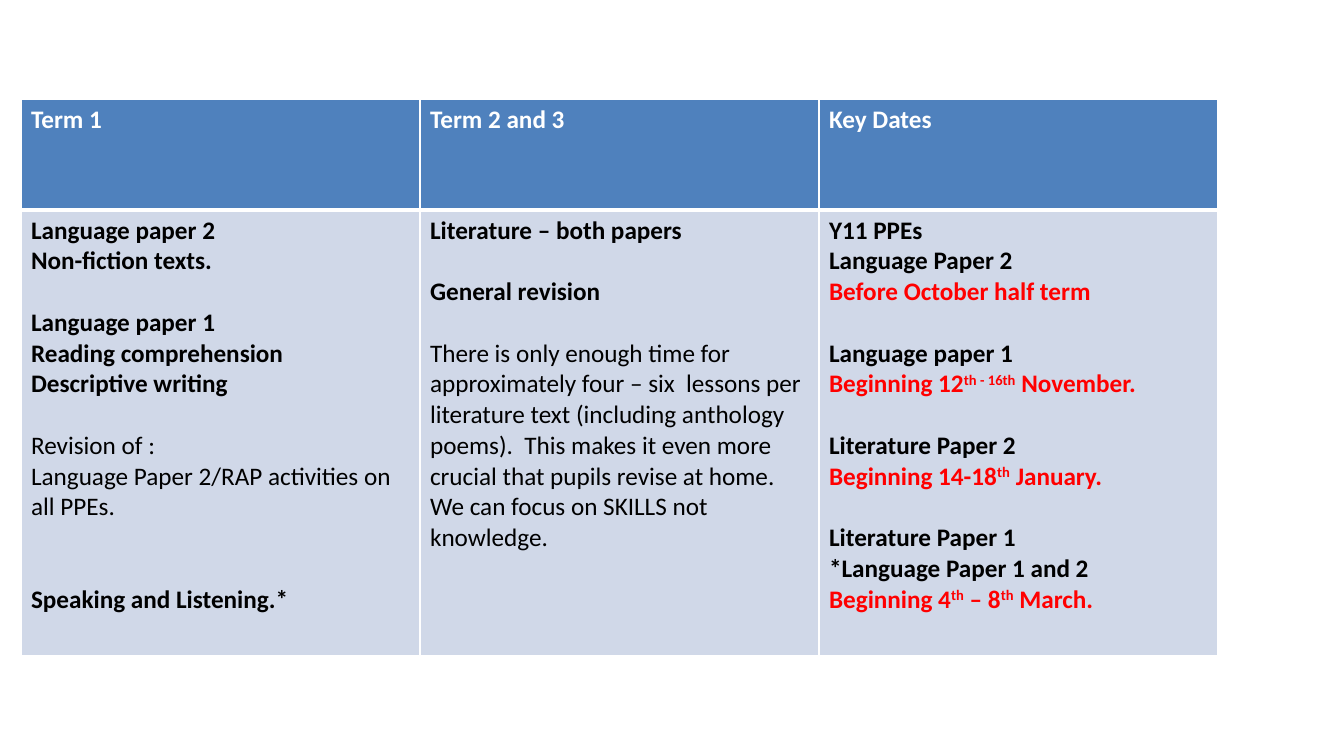
import lxml.etree
import pptx
import pptx.dml.color
import pptx.oxml.ns
import pptx.util

PX = 9525
BLACK, WHITE, RED = "000000", "FFFFFF", "FF0000"
HEADER_FILL, BODY_FILL = "4F81BD", "D0D8E8"
LINE_PT = 22
HEADINGS = ["Term 1", "Term 2 and 3", "Key Dates"]
TERM_1 = [
    ("Language paper 2", {}),
    ("Non-fiction texts.", {}),
    ("Language paper 1", {"gap": 1}),
    ("Reading comprehension", {}),
    ("Descriptive writing", {}),
    ("Revision of :", {"gap": 1, "bold": False}),
    ("Language Paper 2/RAP activities on all PPEs.", {"bold": False}),
    ("Speaking and Listening.*", {"gap": 2}),
]
TERMS_2_AND_3 = [
    ("Literature – both papers", {}),
    ("General revision", {"gap": 1}),
    ("There is only enough time for approximately four – six  lessons per "
     "literature text (including anthology poems).  This makes it even more "
     "crucial that pupils revise at home. We can focus on SKILLS not "
     "knowledge.", {"gap": 1, "bold": False}),
]
KEY_DATES = [
    ("Y11 PPEs", {}),
    ("Language Paper 2", {}),
    ("Before October half term", {"color": RED}),
    ("Language paper 1", {"gap": 1}),
    ("Beginning 12^th - 16th^ November.", {"color": RED}),
    ("Literature Paper 2", {"gap": 1}),
    ("Beginning 14-18^th^ January.", {"color": RED}),
    ("Literature Paper 1", {"gap": 1}),
    ("*Language Paper 1 and 2", {}),
    ("Beginning 4^th^ – 8^th^ March.", {"color": RED}),
]


def px(length):
    """Turn whole px into EMU."""
    return pptx.util.Emu(length * PX)


def rgb(value):
    """Turn a hex string into a colour."""
    return pptx.dml.color.RGBColor.from_string(value)


def write(paragraph, text, color=BLACK, bold=True, gap=0):
    """Write text, raising what stands between carets, after a gap in lines."""
    if gap:
        paragraph.space_before = pptx.util.Pt(gap * LINE_PT)
    for index, part in enumerate(text.split("^")):
        run = paragraph.add_run()
        run.text = part
        run.font.name = "Calibri"
        run.font.size = pptx.util.Pt(18)
        run.font.bold = bold
        run.font.color.rgb = rgb(color)
        if index % 2:
            run.font._element.set("baseline", "30000")


def add_borders(cell, **widths):
    """Draw white cell borders with a width in points for each side."""
    properties = cell._tc.get_or_add_tcPr()
    qn = pptx.oxml.ns.qn
    for side in "LRTB":
        width = pptx.util.Pt(widths.get(side, 1))
        line = lxml.etree.SubElement(properties, qn(f"a:ln{side}"), w=str(width))
        fill = lxml.etree.SubElement(line, qn("a:solidFill"))
        lxml.etree.SubElement(fill, qn("a:srgbClr"), val=WHITE)


def fill_cell(cell, lines, fill, **borders):
    """Give a cell its borders, fill and lines of text."""
    add_borders(cell, **borders)
    cell.fill.solid()
    cell.fill.fore_color.rgb = rgb(fill)
    frame = cell.text_frame
    for index, (text, style) in enumerate(lines):
        paragraph = frame.add_paragraph() if index else frame.paragraphs[0]
        write(paragraph, text, **style)


def add_plan(slide):
    """Add the table of terms and key dates."""
    plan = slide.shapes.add_table(2, 3, px(20), px(95), px(1140), px(529)).table
    plan.first_row = True
    plan.horz_banding = False
    for row, height in zip(plan.rows, (105, 424)):
        row.height = px(height)
    columns = zip(HEADINGS, (TERM_1, TERMS_2_AND_3, KEY_DATES))
    for index, (heading, lines) in enumerate(columns):
        plan.columns[index].width = px(380)
        fill_cell(plan.cell(0, index), [(heading, {"color": WHITE})], HEADER_FILL, B=3)
        fill_cell(plan.cell(1, index), lines, BODY_FILL, T=3)


def main():
    """Build and save the slide."""
    deck = pptx.Presentation()
    deck.slide_width, deck.slide_height = px(1280), px(720)
    add_plan(deck.slides.add_slide(deck.slide_layouts[6]))
    deck.save("out.pptx")


if __name__ == "__main__":
    main()
